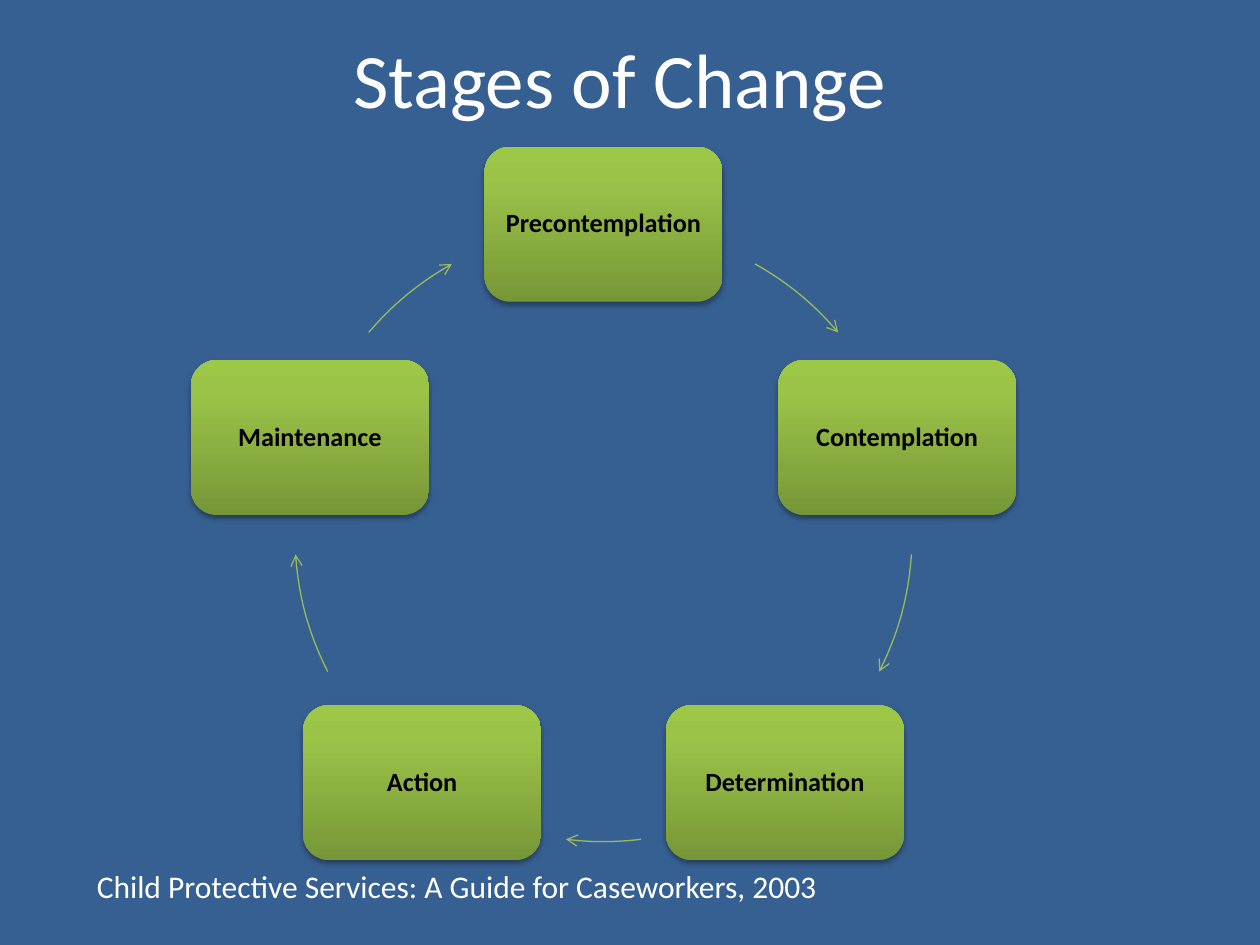
"""Build the Stages of Change slide: five stages joined in a cycle by arc arrows."""
from copy import deepcopy
from math import cos, radians, sin

from lxml import etree
from pptx import Presentation
from pptx.dml.color import RGBColor
from pptx.enum.shapes import MSO_SHAPE
from pptx.enum.text import MSO_ANCHOR, MSO_AUTO_SIZE, PP_ALIGN
from pptx.oxml import parse_xml
from pptx.oxml.ns import nsdecls, qn
from pptx.util import Inches, Pt

ARC = MSO_SHAPE.ARC
ROUNDED = MSO_SHAPE.ROUNDED_RECTANGLE
MIDDLE = MSO_ANCHOR.MIDDLE
CENTER = PP_ALIGN.CENTER
LEFT = PP_ALIGN.LEFT
FIT_SHAPE = MSO_AUTO_SIZE.SHAPE_TO_FIT_TEXT

COLORS = {
    "background": "376092",
    "white": "FFFFFF",
    "black": "000000",
    "arrow": "9BBB59",
    "green_dark": "779737",
    "green_mid": "9BC348",
    "green_light": "9DC746",
}
STAGES = ["Precontemplation", "Contemplation", "Determination", "Action", "Maintenance"]
ARC_ANGLES = [(299.4, 319.5), (4, 26.7), (83, 97), (153.3, 176), (220.5, 240.6)]
GRADIENT = [(0, "green_dark"), (0.8, "green_mid"), (1, "green_light")]
CENTER_X, CENTER_Y, RADIUS = 4.79, 4.23, 2.45
BOX_WIDTH, BOX_HEIGHT = 1.89, 1.23


def write_text(shape, text, size, color, align, bold=False):
    """Put one formatted paragraph in a shape and return the paragraph."""
    shape.text_frame.text = text
    para = shape.text_frame.paragraphs[0]
    para.alignment = align
    font = para.runs[0].font
    font.name = "Calibri"
    font.size = Pt(size)
    font.bold = bold
    font.color.rgb = RGBColor.from_string(COLORS[color])
    return para


deck = Presentation()
deck.slide_width = Inches(10)
deck.slide_height = Inches(7.5)
page = deck.slides.add_slide(deck.slide_layouts[5])
page.background.fill.solid()
page.background.fill.fore_color.rgb = RGBColor.from_string(COLORS["background"])

title = page.shapes.title
title.left, title.top = Inches(0.42), Inches(-0.01)
title.width, title.height = Inches(9), Inches(1.25)
title.text_frame.vertical_anchor = MIDDLE
write_text(title, "Stages of Change", 44, "white", CENTER)

for index, (stage, angles) in enumerate(zip(STAGES, ARC_ANGLES)):
    turn = radians(index * 360 / len(STAGES) - 90)
    box = page.shapes.add_shape(
        ROUNDED,
        Inches(CENTER_X + RADIUS * cos(turn) - BOX_WIDTH / 2),
        Inches(CENTER_Y + RADIUS * sin(turn) - BOX_HEIGHT / 2),
        Inches(BOX_WIDTH),
        Inches(BOX_HEIGHT),
    )
    box.line.fill.background()
    box.fill.gradient()
    box.fill.gradient_angle = 90
    last_stop = box._element.spPr.find(".//" + qn("a:gs"))
    last_stop.addnext(deepcopy(last_stop))
    for stop, (position, color) in zip(box.fill.gradient_stops, GRADIENT):
        stop.position = position
        stop.color.rgb = RGBColor.from_string(COLORS[color])
    box.shadow.inherit = False
    box._element.spPr.find(qn("a:effectLst")).append(parse_xml(
        f'<a:outerShdw {nsdecls("a")} blurRad="{Pt(3.1)}" dist="{Pt(1.8)}" dir="5400000" '
        f'rotWithShape="0"><a:srgbClr val="{COLORS["black"]}"><a:alpha val="35000"/>'
        '</a:srgbClr></a:outerShdw>'
    ))
    frame = box.text_frame
    frame.word_wrap = True
    frame.vertical_anchor = MIDDLE
    frame.margin_left = frame.margin_right = Inches(0.06)
    frame.margin_top = frame.margin_bottom = Inches(0.06)
    write_text(box, stage, 15, "black", CENTER, bold=True).line_spacing = 0.9

    arrow = page.shapes.add_shape(
        ARC,
        Inches(CENTER_X - RADIUS),
        Inches(CENTER_Y - RADIUS),
        Inches(2 * RADIUS),
        Inches(2 * RADIUS),
    )
    for place, angle in enumerate(angles):
        arrow.adjustments[place] = angle * 0.6
    arrow.shadow.inherit = False
    arrow.fill.background()
    arrow.line.width = Pt(0.75)
    arrow.line.color.rgb = RGBColor.from_string(COLORS["arrow"])
    etree.SubElement(arrow._element.spPr.find(qn("a:ln")), qn("a:tailEnd"), type="arrow")

credit = page.shapes.add_textbox(Inches(0.67), Inches(6.83), Inches(6), Inches(0.4))
credit.text_frame.word_wrap = False
credit.text_frame.auto_size = FIT_SHAPE
write_text(credit, "Child Protective Services: A Guide for Caseworkers, 2003", 18, "white", LEFT)

deck.save("out.pptx")
